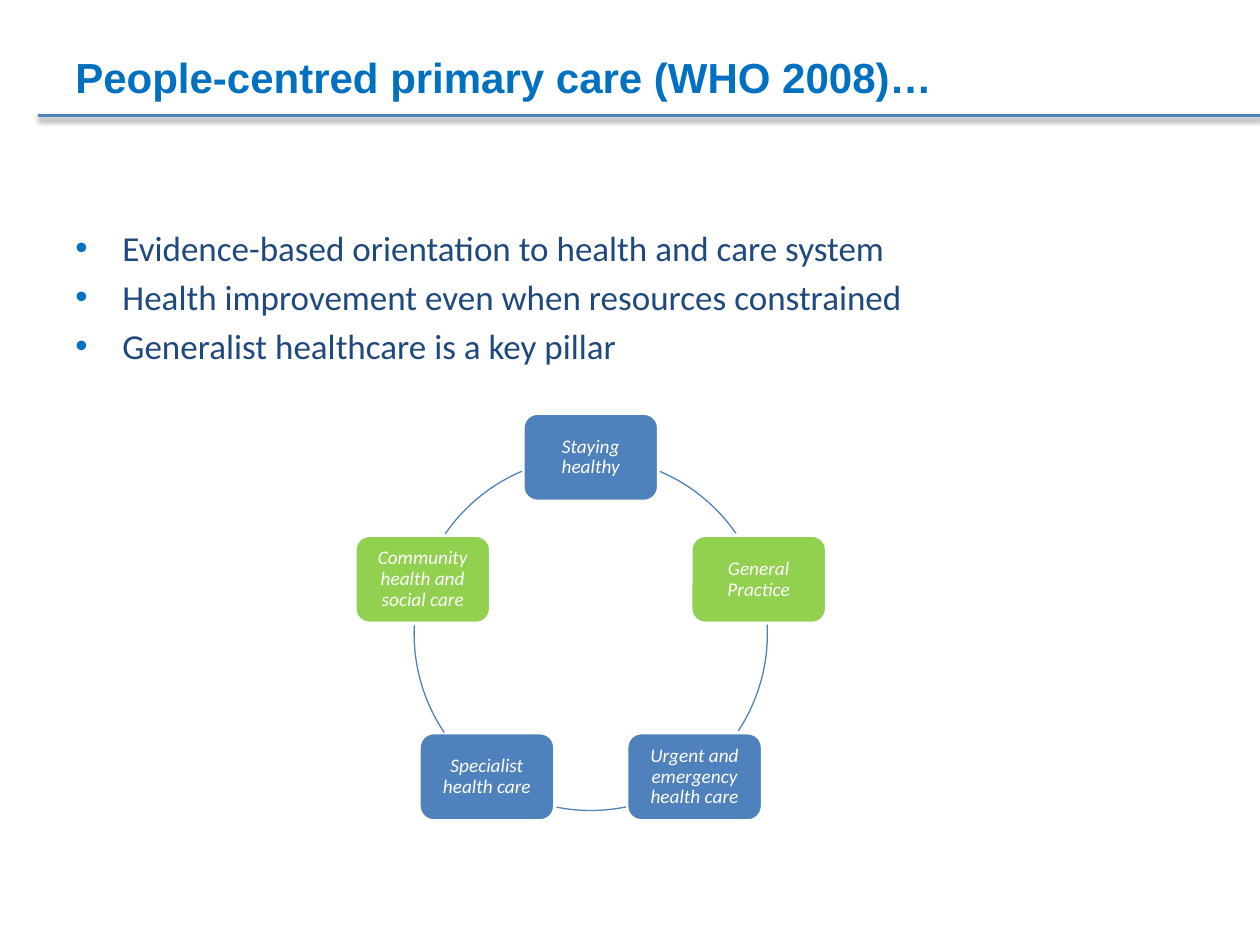
"""Build a slide on people-centred primary care with a ring of services."""
from math import cos, radians, sin

from lxml import etree
from pptx import Presentation
from pptx.dml.color import RGBColor
from pptx.enum.shapes import MSO_CONNECTOR, MSO_SHAPE
from pptx.enum.text import MSO_ANCHOR, PP_ALIGN
from pptx.oxml.ns import qn
from pptx.util import Cm, Pt

ROUNDED, ARC = MSO_SHAPE.ROUNDED_RECTANGLE, MSO_SHAPE.ARC
STRAIGHT = MSO_CONNECTOR.STRAIGHT
TOP, MIDDLE = MSO_ANCHOR.TOP, MSO_ANCHOR.MIDDLE
CENTRE = PP_ALIGN.CENTER

BLUE, GREEN, WHITE = "4F81BD", "92D050", "FFFFFF"
TITLE_BLUE, BULLET_BLUE, NAVY = "0070C0", "0072C6", "1F497D"

TITLE_FONT = {"name": "Arial", "size": Pt(24), "bold": True}
BODY_FONT = {"name": "Calibri", "size": Pt(20)}
NODE_FONT = {"name": "Calibri", "size": Pt(11), "italic": True}

RING_X, RING_Y, RING_RADIUS = 11.91, 12.78, 3.56
NODE_WIDTH, NODE_HEIGHT = 2.74, 1.78

PILLARS = [
    "Evidence-based orientation to health and care system",
    "Health improvement even when resources constrained",
    "Generalist healthcare is a key pillar",
]
SERVICES = [
    ("Staying healthy", BLUE, (293, 325.5)),
    ("General Practice", GREEN, (357, 34)),
    ("Urgent and emergency health care", BLUE, (78.5, 101.5)),
    ("Specialist health care", BLUE, (146, 183)),
    ("Community health and social care", GREEN, (214.5, 247)),
]


def colour(hex_value):
    """Return the RGB colour for a hex string."""
    return RGBColor.from_string(hex_value)


def apply(target, formats):
    """Set each attribute in formats on target."""
    for attribute, value in formats.items():
        setattr(target, attribute, value)


def add_element(parent, tag, **attributes):
    """Append a DrawingML element to parent."""
    return etree.SubElement(parent, qn(f"a:{tag}"), attributes)


class CareSlide:
    """Holds the slide and draws its elements in one style."""

    def __init__(self, slide):
        """Keep the slide that is drawn on."""
        self.slide = slide

    def add_text(self, paragraph, text, font, hex_value):
        """Add one formatted run to a paragraph."""
        run = paragraph.add_run()
        run.text = text
        apply(run.font, font)
        run.font.color.rgb = colour(hex_value)

    def frame(self, left, top, width, height):
        """Add a wrapping text box and return its text frame."""
        box = self.slide.shapes.add_textbox(Cm(left), Cm(top), Cm(width), Cm(height))
        apply(box.text_frame, {"word_wrap": True, "vertical_anchor": TOP})
        return box.text_frame

    def title(self, text):
        """Add the slide title."""
        heading = self.frame(1.27, 0.74, 17.93, 3.18).paragraphs[0]
        heading.line_spacing = Pt(34)
        self.add_text(heading, text, TITLE_FONT, TITLE_BLUE)

    def bullets(self, points):
        """Add the bulleted list."""
        body = self.frame(1.27, 4.45, 22.86, 12.57)
        for index, point in enumerate(points):
            item = body.add_paragraph() if index else body.paragraphs[0]
            properties = item._p.get_or_add_pPr()
            properties.set("marL", str(Cm(0.95)))
            properties.set("indent", str(-Cm(0.95)))
            add_element(add_element(properties, "buClr"), "srgbClr", val=BULLET_BLUE)
            add_element(properties, "buFont", typeface="Arial")
            add_element(properties, "buChar", char="•")
            item.space_before = Pt(4 if index else 0)
            self.add_text(item, point, BODY_FONT, NAVY)

    def rule(self, left, right, y):
        """Add the shadowed line under the title."""
        rule = self.slide.shapes.add_connector(STRAIGHT, Cm(left), Cm(y), Cm(right), Cm(y))
        rule.line.color.rgb = colour(BLUE)
        rule.line.width = Pt(2)
        effects = add_element(rule._element.spPr, "effectLst")
        shadow = add_element(effects, "outerShdw", blurRad=str(Pt(3.1)), dist=str(Pt(1.6)),
                             dir="5400000", rotWithShape="0")
        black = add_element(shadow, "srgbClr", val="000000")
        add_element(black, "alpha", val="38000")

    def node(self, text, fill, angle):
        """Add a service box centred on the ring at an angle."""
        left = RING_X + RING_RADIUS * cos(radians(angle)) - NODE_WIDTH / 2
        top = RING_Y + RING_RADIUS * sin(radians(angle)) - NODE_HEIGHT / 2
        node = self.slide.shapes.add_shape(
            ROUNDED, Cm(left), Cm(top), Cm(NODE_WIDTH), Cm(NODE_HEIGHT))
        node.shadow.inherit = False
        node.fill.solid()
        node.fill.fore_color.rgb = colour(fill)
        node.line.color.rgb = colour(WHITE)
        node.line.width = Pt(2)
        apply(node.text_frame, {"word_wrap": True, "vertical_anchor": MIDDLE})
        for side in ("left", "top", "right", "bottom"):
            setattr(node.text_frame, f"margin_{side}", Cm(0.12))
        label = node.text_frame.paragraphs[0]
        apply(label, {"alignment": CENTRE, "line_spacing": 0.9})
        self.add_text(label, text, NODE_FONT, WHITE)

    def arc(self, start, end):
        """Add the part of the ring between two angles in degrees."""
        arc = self.slide.shapes.add_shape(
            ARC, Cm(RING_X - RING_RADIUS), Cm(RING_Y - RING_RADIUS),
            Cm(2 * RING_RADIUS), Cm(2 * RING_RADIUS))
        arc.shadow.inherit = False
        arc.fill.background()
        arc.line.color.rgb = colour(BLUE)
        arc.line.width = Pt(0.75)
        for index, angle in enumerate((start, end)):
            arc.adjustments[index] = angle * 0.6


def main():
    """Build and save the slide."""
    deck = Presentation()
    deck.slide_width, deck.slide_height = Cm(25.4), Cm(19.05)
    care = CareSlide(deck.slides.add_slide(deck.slide_layouts[6]))
    care.title("People-centred primary care (WHO 2008)…")
    care.bullets(PILLARS)
    for position, (service, fill, link) in enumerate(SERVICES):
        care.node(service, fill, position * 360 / len(SERVICES) - 90)
        care.arc(*link)
    care.rule(0.76, 25.4, 2.33)
    deck.save("out.pptx")


if __name__ == "__main__":
    main()
